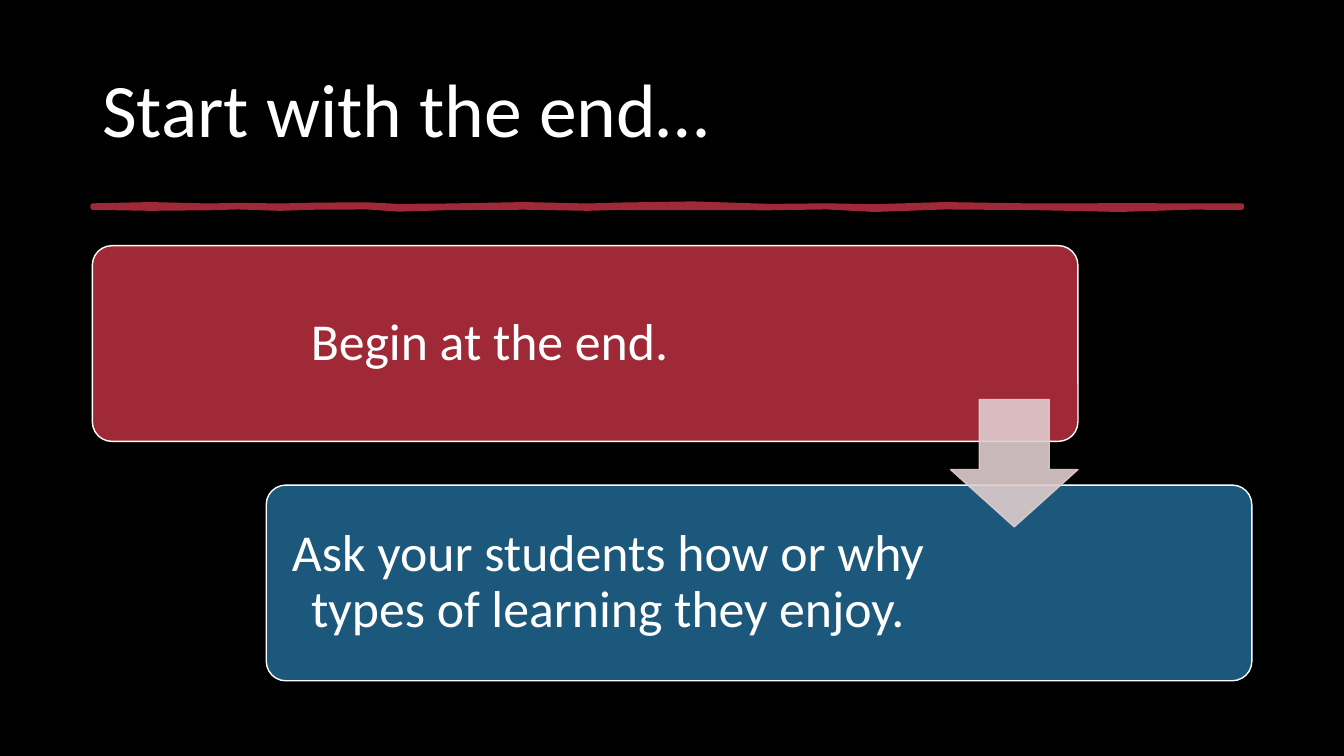
"""Build the slide that tells teachers to start with the end."""
import pptx
import pptx.util
import pptx.dml.color
import pptx.enum.shapes
import pptx.enum.text
import pptx.oxml
import pptx.oxml.ns

Pt = pptx.util.Pt
Shapes = pptx.enum.shapes.MSO_SHAPE
Align = pptx.enum.text.PP_ALIGN

TITLE = "Start with the end…"
STEPS = [
    {"text": "Begin at the end.", "fill": "red", "text_width": 559.4},
    {"text": "Ask your students how or why types of learning they enjoy.",
     "fill": "blue", "text_width": 480.2},
]
THEME = {
    "font": "Calibri", "title_size": 54, "step_size": 37,
    "background": "000000", "text": "FFFFFF", "red": "9F2936",
    "blue": "1B587C", "arrow": "DFCDCE",
}
TITLE_BOX = (66, 28.8, 828, 104.4)
CARD_LEFT, CARD_TOP, CARD_WIDTH, CARD_HEIGHT = 66, 175.5, 704, 139.8
STEP_RIGHT, STEP_DOWN = 124.2, 171
TEXT_INSET = 4
ARROW_SIZE = 91
RULE_EDGES = [
    (66.2, 146.9, 148.3), (107, 146, 149), (150, 147, 148.6),
    (170, 146.5, 148), (200, 147, 149), (225, 146.4, 148.2),
    (262, 146.2, 148), (285, 147.3, 149.6), (320, 147, 148.5),
    (375, 146, 148.2), (420, 147, 149), (440, 146.4, 148.4),
    (495, 145.5, 148.5), (550, 147.3, 148.6), (590, 146.9, 148),
    (625, 147.5, 149.8), (675, 146, 148), (740, 147, 148.5),
    (800, 146.8, 149.8), (850, 146.9, 148.2), (887, 146.9, 148.3),
]


def theme_color(name):
    return pptx.dml.color.RGBColor.from_string(THEME[name])


def paint(shape, fill, line, line_width):
    shape.shadow.inherit = False
    shape.fill.solid()
    shape.fill.fore_color.rgb = theme_color(fill)
    shape.line.color.rgb = theme_color(line)
    shape.line.width = Pt(line_width)


def add_text(slide, box, text, size, align, insets):
    text_box = slide.shapes.add_textbox(*map(Pt, box))
    frame = text_box.text_frame
    frame.word_wrap = True
    frame.vertical_anchor = pptx.enum.text.MSO_ANCHOR.MIDDLE
    frame.margin_left = frame.margin_right = Pt(insets[0])
    frame.margin_top = frame.margin_bottom = Pt(insets[1])
    paragraph = frame.paragraphs[0]
    paragraph.alignment = align
    paragraph.line_spacing = 0.9
    run = paragraph.add_run()
    run.text = text
    run.font.name = THEME["font"]
    run.font.size = Pt(size)
    run.font.color.rgb = theme_color("text")


def add_rule(slide):
    top = [(Pt(x), Pt(upper)) for x, upper, lower in RULE_EDGES]
    bottom = [(Pt(x), Pt(lower)) for x, upper, lower in reversed(RULE_EDGES)]
    builder = slide.shapes.build_freeform(*top[0])
    builder.add_line_segments(top[1:] + bottom, close=True)
    paint(builder.convert_to_shape(), "red", "red", 3.25)


def add_step(slide, index, step):
    left = CARD_LEFT + index * STEP_RIGHT
    top = CARD_TOP + index * STEP_DOWN
    card = slide.shapes.add_shape(
        Shapes.ROUNDED_RECTANGLE, Pt(left), Pt(top), Pt(CARD_WIDTH), Pt(CARD_HEIGHT))
    card.adjustments[0] = 0.1
    paint(card, step["fill"], "text", 1)
    box = (left + TEXT_INSET, top + TEXT_INSET,
           step["text_width"], CARD_HEIGHT - 2 * TEXT_INSET)
    add_text(slide, box, step["text"], THEME["step_size"], Align.CENTER, (10.8, 10.8))


def add_arrow(slide):
    left = CARD_LEFT + CARD_WIDTH - ARROW_SIZE
    gap_middle = CARD_TOP + (CARD_HEIGHT + STEP_DOWN) / 2
    arrow = slide.shapes.add_shape(
        Shapes.DOWN_ARROW, Pt(left), Pt(gap_middle - ARROW_SIZE / 2),
        Pt(ARROW_SIZE), Pt(ARROW_SIZE))
    arrow.adjustments[0] = 0.55
    arrow.adjustments[1] = 0.45
    paint(arrow, "arrow", "arrow", 1)
    for color in arrow.element.spPr.iter(pptx.oxml.ns.qn("a:srgbClr")):
        alpha = pptx.oxml.parse_xml(
            f'<a:alpha {pptx.oxml.ns.nsdecls("a")} val="90000"/>')
        color.append(alpha)


def main():
    presentation = pptx.Presentation()
    presentation.slide_width, presentation.slide_height = Pt(960), Pt(540)
    slide = presentation.slides.add_slide(presentation.slide_layouts[6])
    slide.background.fill.solid()
    slide.background.fill.fore_color.rgb = theme_color("background")
    add_text(slide, TITLE_BOX, TITLE, THEME["title_size"], Align.LEFT, (7.2, 3.6))
    add_rule(slide)
    for index, step in enumerate(STEPS):
        add_step(slide, index, step)
    add_arrow(slide)
    presentation.save("out.pptx")


if __name__ == "__main__":
    main()
